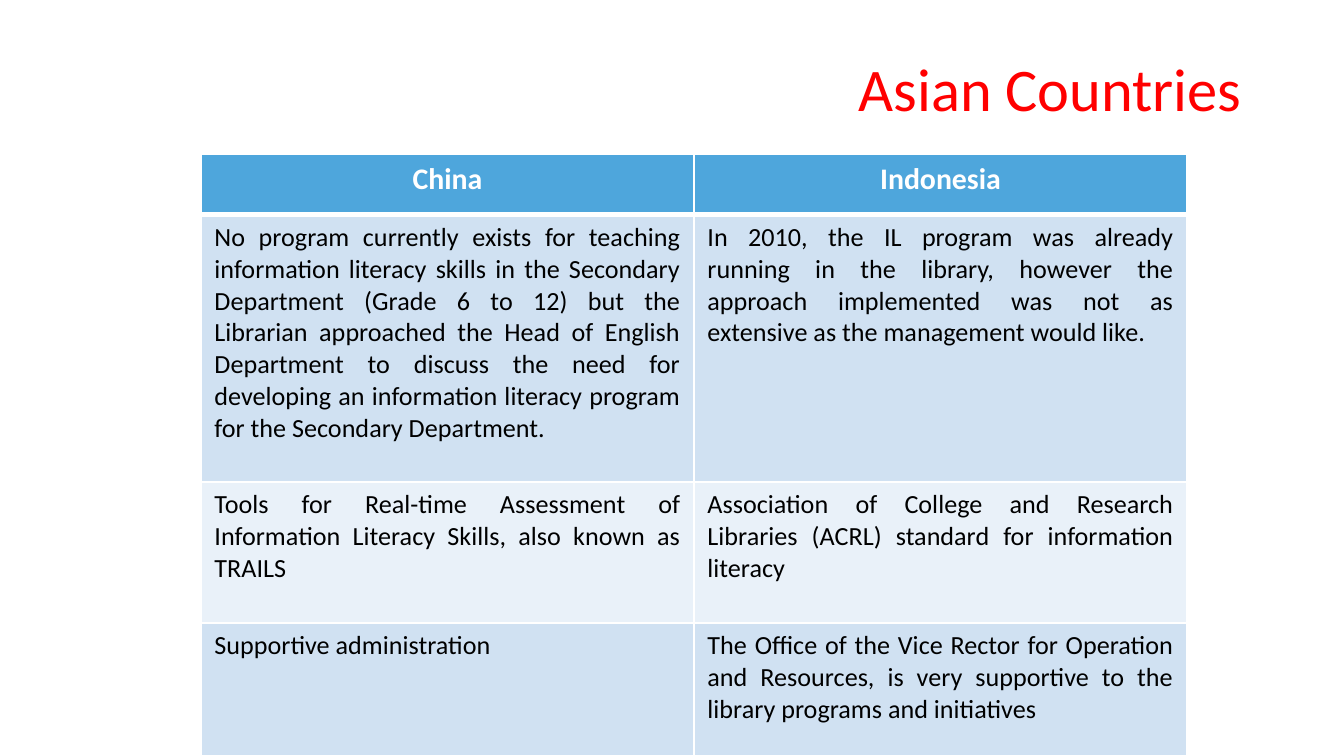
from lxml.etree import SubElement
from pptx import Presentation
from pptx.dml.color import RGBColor
from pptx.enum.text import MSO_ANCHOR, PP_ALIGN
from pptx.oxml.ns import qn
from pptx.util import Pt

TITLE = "Asian Countries"
ROWS = [
    ("China", "Indonesia"),
    ("No program currently exists for teaching information literacy skills in "
     "the Secondary Department (Grade 6 to 12) but the Librarian approached the "
     "Head of English Department to discuss the need for developing an "
     "information literacy program for the Secondary Department.",
     "In 2010, the IL program was already running in the library, however the "
     "approach implemented was not as extensive as the management would like."),
    ("Tools for Real-time Assessment of Information Literacy Skills, also known "
     "as TRAILS",
     "Association of College and Research Libraries (ACRL) standard for "
     "information literacy"),
    ("Supportive administration",
     "The Office of the Vice Rector for Operation and Resources, is very "
     "supportive to the library programs and initiatives"),
]
HEIGHTS = [61, 267, 141, 133]
LEFT, TOP, COL = 201, 154, 493
COLORS = {"title": "FF0000", "head": "4EA6DC", "odd": "D0E1F2",
          "even": "E9F1F9", "white": "FFFFFF", "text": "000000"}
FONT = "Calibri"
SCALE = 9144000 / 1344


def px(n):
    return round(n * SCALE)


def color(name):
    return RGBColor.from_string(COLORS[name])


def write(frame, text, size, ink, align, bold=False):
    para = frame.paragraphs[0]
    para.alignment = align
    run = para.add_run()
    run.text = text
    font = run.font
    font.name, font.size, font.bold = FONT, Pt(size), bold
    font.color.rgb = color(ink)


def border(cell, widths):
    """Add white cell borders; they must come before the fill."""
    props = cell._tc.get_or_add_tcPr()
    for side, width in widths.items():
        line = SubElement(props, qn(f"a:ln{side}"), w=str(Pt(width)))
        fill = SubElement(line, qn("a:solidFill"))
        SubElement(fill, qn("a:srgbClr"), val=COLORS["white"])


deck = Presentation()
deck.slide_width, deck.slide_height = px(1344), px(756)
slide = deck.slides.add_slide(deck.slide_layouts[6])

title = slide.shapes.add_textbox(px(89), px(42), px(1166), px(90)).text_frame
title.word_wrap = True
title.vertical_anchor = MSO_ANCHOR.MIDDLE
write(title, TITLE, 32.4, "title", PP_ALIGN.RIGHT)

table = slide.shapes.add_table(
    len(ROWS), 2, px(LEFT), px(TOP), px(2 * COL), px(sum(HEIGHTS))).table
for column in table.columns:
    column.width = px(COL)

for r, (texts, height) in enumerate(zip(ROWS, HEIGHTS)):
    table.rows[r].height = px(height)
    head = r == 0
    shade = "head" if head else "odd" if r % 2 else "even"
    for c, text in enumerate(texts):
        cell = table.cell(r, c)
        border(cell, {"L": 1, "R": 1, "T": 3 if r == 1 else 1,
                      "B": 3 if head else 1})
        cell.fill.solid()
        cell.fill.fore_color.rgb = color(shade)
        if head:
            write(cell.text_frame, text, 16, "white", PP_ALIGN.CENTER, True)
        else:
            write(cell.text_frame, text, 14, "text", PP_ALIGN.JUSTIFY)

deck.save("out.pptx")
